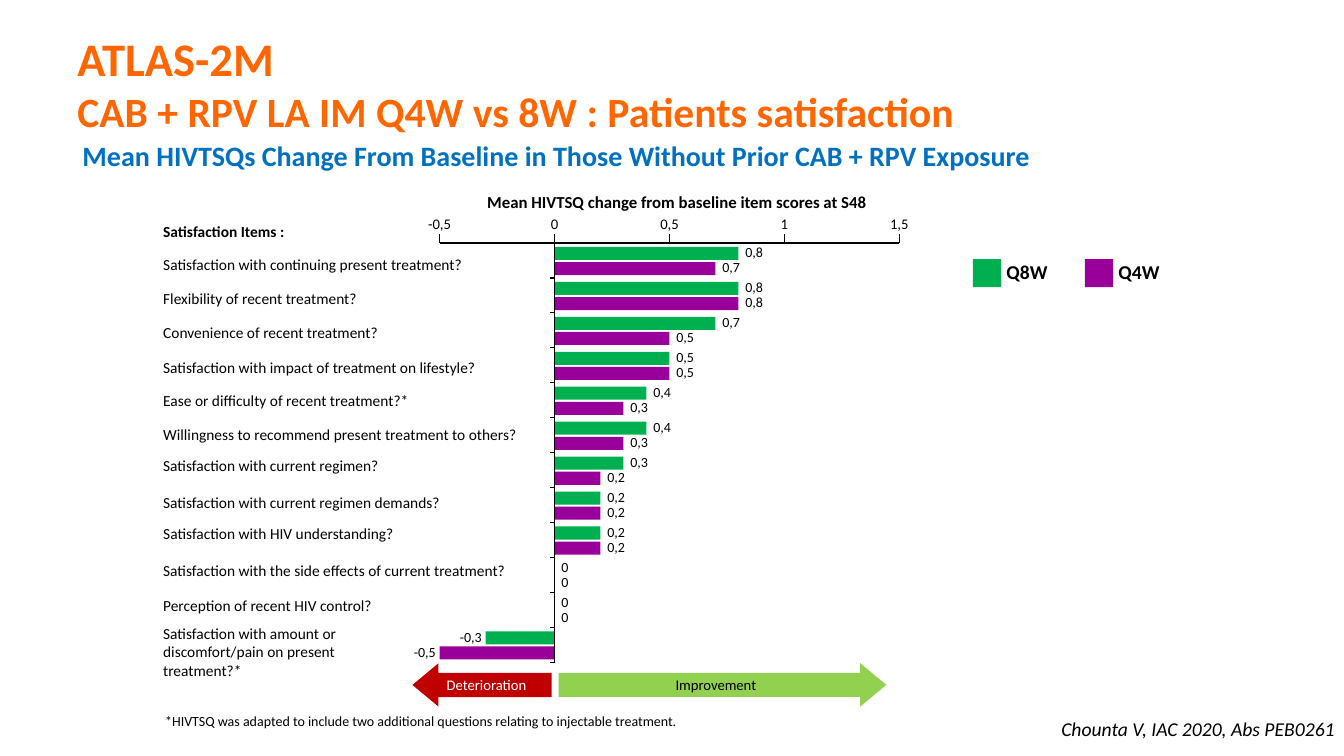
from lxml import etree
from pptx import Presentation
from pptx.dml.color import RGBColor
from pptx.enum.shapes import MSO_CONNECTOR, MSO_SHAPE
from pptx.enum.text import MSO_ANCHOR, MSO_AUTO_SIZE, PP_ALIGN
from pptx.oxml.ns import qn
from pptx.util import Inches, Pt

BLACK = RGBColor(0x00, 0x00, 0x00)
WHITE = RGBColor(0xFF, 0xFF, 0xFF)
ORANGE = RGBColor(0xFF, 0x66, 0x00)
BLUE = RGBColor(0x00, 0x70, 0xC0)
GREEN = RGBColor(0x00, 0xB0, 0x50)
PURPLE = RGBColor(0x99, 0x00, 0x99)
LIME = RGBColor(0x92, 0xD0, 0x50)
RED = RGBColor(0xC0, 0x00, 0x00)

FONT = "Calibri"
ZERO_X, UNIT = 5.5, 2.28
AXIS_Y, AXIS_END_Y = 2.41, 6.57
BAR_HEIGHT, BAR_STEP = 0.13, 0.15

ITEMS = [
    ("Satisfaction with continuing present treatment?", 2.48, 3.19, 0.8, 0.7),
    ("Flexibility of recent treatment?", 2.82, 2.14, 0.8, 0.8),
    ("Convenience of recent treatment?", 3.16, 2.36, 0.7, 0.5),
    ("Satisfaction with impact of treatment on lifestyle?", 3.5, 3.33, 0.5, 0.5),
    ("Ease or difficulty of recent treatment?*", 3.83, 2.67, 0.4, 0.3),
    ("Willingness to recommend present treatment to others?", 4.17, 3.74, 0.4, 0.3),
    ("Satisfaction with current regimen?", 4.48, 2.36, 0.3, 0.2),
    ("Satisfaction with current regimen demands?", 4.84, 2.97, 0.2, 0.2),
    ("Satisfaction with HIV understanding?", 5.15, 2.51, 0.2, 0.2),
    ("Satisfaction with the side effects of current treatment?", 5.52, 3.63, 0, 0),
    ("Perception of recent HIV control?", 5.86, 2.3, 0, 0),
    ("Satisfaction with amount or\ndiscomfort/pain on present\ntreatment?*",
     6.14, 1.93, -0.3, -0.5),
]


def add_text(slide, text, left, top, width, height, size, color=BLACK,
             align=PP_ALIGN.LEFT, bold=False, italic=False, wrap=False):
    """Add a text box holding one paragraph in a single style."""
    box = slide.shapes.add_textbox(
        Inches(left), Inches(top), Inches(width), Inches(height))
    frame = box.text_frame
    frame.word_wrap = wrap
    frame.auto_size = MSO_AUTO_SIZE.SHAPE_TO_FIT_TEXT
    paragraph = frame.paragraphs[0]
    paragraph.text = text
    paragraph.alignment = align
    font = paragraph.font
    font.name, font.size, font.bold, font.italic = FONT, Pt(size), bold, italic
    font.color.rgb = color


def add_title(slide):
    """Add the two-line title, each line in its own size."""
    box = slide.shapes.add_textbox(
        Inches(0.67), Inches(0.01), Inches(9.26), Inches(1.62))
    frame = box.text_frame
    frame.word_wrap = True
    frame.vertical_anchor = MSO_ANCHOR.MIDDLE
    paragraph = frame.paragraphs[0]
    study = paragraph.add_run()
    study.text = "ATLAS-2M"
    study.font.size = Pt(33.3)
    paragraph.add_line_break()
    topic = paragraph.add_run()
    topic.text = "CAB + RPV LA IM Q4W vs 8W : Patients satisfaction"
    topic.font.size = Pt(29.7)
    paragraph.font.name, paragraph.font.bold = FONT, True
    paragraph.font.color.rgb = ORANGE


def add_filled(slide, kind, left, top, width, height, color):
    """Add a preset shape with a plain fill and no outline."""
    shape = slide.shapes.add_shape(
        kind, Inches(left), Inches(top), Inches(width), Inches(height))
    shape.shadow.inherit = False
    shape.fill.solid()
    shape.fill.fore_color.rgb = color
    shape.line.fill.background()
    return shape


def add_line(slide, x1, y1, x2, y2):
    """Add a thin black line without a shadow."""
    line = slide.shapes.add_connector(
        MSO_CONNECTOR.STRAIGHT, Inches(x1), Inches(y1), Inches(x2), Inches(y2))
    line.line.color.rgb = BLACK
    line.line.width = Pt(1)
    etree.SubElement(line._element.spPr, qn("a:effectLst"))


def add_arrow(slide, left, width, color):
    """Add a block arrow below the chart."""
    arrow = add_filled(slide, MSO_SHAPE.RIGHT_ARROW, left, 6.58, width, 0.43, color)
    arrow.adjustments[0] = 0.557
    arrow.adjustments[1] = 0.6
    return arrow


def decimal_comma(value):
    """Format a number with a decimal comma."""
    return f"{value:g}".replace(".", ",")


def add_axes(slide):
    """Draw the score axis, the zero line and their ticks."""
    for value in (-0.5, 0, 0.5, 1, 1.5):
        x = ZERO_X + value * UNIT
        add_text(slide, decimal_comma(value), x - 0.25, 2.08, 0.5, 0.28, 10.5,
                 align=PP_ALIGN.CENTER)
        add_line(slide, x, AXIS_Y if value else AXIS_END_Y, x, 2.32)
    add_line(slide, ZERO_X + 1.5 * UNIT, AXIS_Y, ZERO_X - 0.5 * UNIT, AXIS_Y)
    pitch = (AXIS_END_Y - AXIS_Y) / len(ITEMS)
    for row in range(1, len(ITEMS) + 1):
        y = AXIS_Y + row * pitch
        add_line(slide, ZERO_X, y, ZERO_X - 0.05, y)


def add_bar(slide, value, top, color):
    """Add one bar, if it has a length, and its value."""
    end = ZERO_X + value * UNIT
    if value:
        add_filled(slide, MSO_SHAPE.RECTANGLE, min(ZERO_X, end), top,
                   abs(end - ZERO_X), BAR_HEIGHT, color)
    width = 0.45 if value < 0 else 0.38 if value else 0.28
    left = end + 0.06 - width if value < 0 else end - 0.03
    align = PP_ALIGN.RIGHT if value < 0 else PP_ALIGN.LEFT
    add_text(slide, decimal_comma(value), left, top - 0.08, width, 0.27, 10,
             align=align)


def add_items(slide):
    """Add every satisfaction item with its pair of bars."""
    pitch = (AXIS_END_Y - AXIS_Y) / len(ITEMS)
    for row, (label, label_top, width, q8w, q4w) in enumerate(ITEMS):
        height = 0.66 if "\n" in label else 0.29
        add_text(slide, label, 1.52, label_top, width, height, 11)
        bar_top = AXIS_Y + 0.04 + row * pitch
        add_bar(slide, q8w, bar_top, GREEN)
        add_bar(slide, q4w, bar_top + BAR_STEP, PURPLE)


def add_legend(slide):
    """Add the colour key for the two dosing groups."""
    for name, left, color in (("Q8W", 9.65, GREEN), ("Q4W", 10.76, PURPLE)):
        add_filled(slide, MSO_SHAPE.RECTANGLE, left, 2.57, 0.28, 0.28, color)
        add_text(slide, name, left + 0.22, 2.53, 0.62, 0.34, 14,
                 align=PP_ALIGN.RIGHT, bold=True)


def add_directions(slide):
    """Add the arrows for deterioration and improvement."""
    add_arrow(slide, 5.54, 3.25, LIME)
    add_text(slide, "Improvement", 6.59, 6.66, 1.02, 0.28, 10.5,
             align=PP_ALIGN.CENTER)
    add_arrow(slide, 4.09, 1.38, RED).rotation = 180
    add_text(slide, "Deterioration", 4.32, 6.66, 1.01, 0.28, 10.5, WHITE,
             PP_ALIGN.CENTER)


def main():
    """Build the slide and save it."""
    presentation = Presentation()
    presentation.slide_width = Inches(13.33)
    presentation.slide_height = Inches(7.5)
    slide = presentation.slides.add_slide(presentation.slide_layouts[6])
    add_title(slide)
    add_text(slide, "Mean HIVTSQs Change From Baseline in Those Without Prior "
             "CAB + RPV Exposure", 0.72, 1.33, 10.04, 0.44, 20, BLUE,
             bold=True, wrap=True)
    add_text(slide, "Mean HIVTSQ change from baseline item scores at S48",
             4.38, 1.85, 4.67, 0.3, 12, align=PP_ALIGN.CENTER, bold=True, wrap=True)
    add_text(slide, "Satisfaction Items :", 1.52, 2.15, 1.42, 0.29, 11, bold=True)
    add_items(slide)
    add_axes(slide)
    add_legend(slide)
    add_directions(slide)
    add_text(slide, "*HIVTSQ was adapted to include two additional questions "
             "relating to injectable treatment.", 1.54, 7.02, 5.75, 0.27, 10, wrap=True)
    add_text(slide, "Chounta V, IAC 2020, Abs PEB0261", 10.39, 7.06, 2.95, 0.34, 14,
             align=PP_ALIGN.RIGHT, italic=True)
    presentation.save("out.pptx")


if __name__ == "__main__":
    main()
